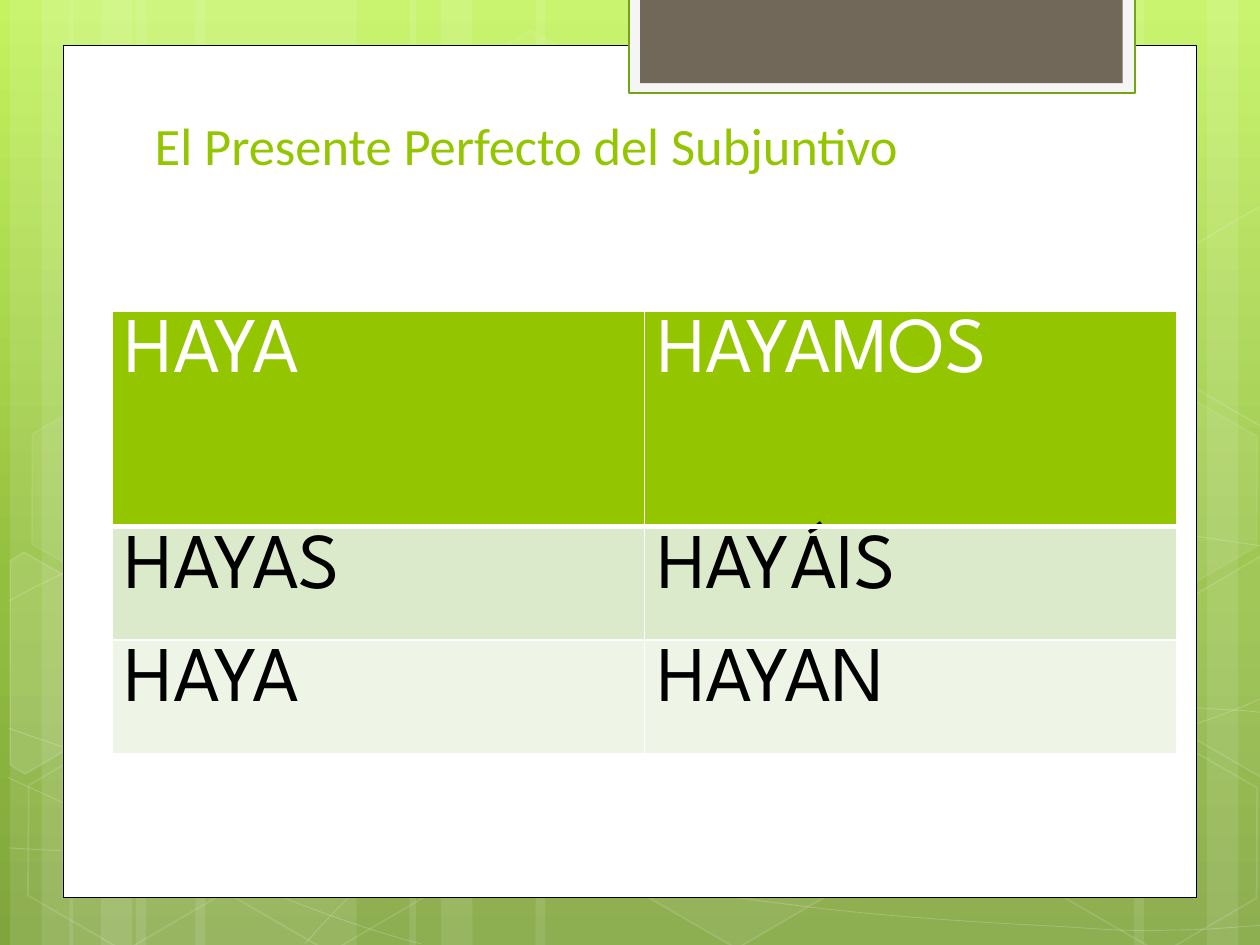
import copy
import math
from dataclasses import dataclass
from typing import Optional

import pptx
import pptx.dml.color
import pptx.enum.shapes
import pptx.enum.text
import pptx.oxml.ns
import pptx.util
from lxml import etree

Inches = pptx.util.Inches
Pt = pptx.util.Pt
qn = pptx.oxml.ns.qn
ShapeKind = pptx.enum.shapes.MSO_SHAPE
Point = tuple[float, float]
TILT = 30


@dataclass
class Paint:
    fill: Optional[str] = None
    fill_opacity: int = 100
    line: Optional[str] = None
    line_width: float = 1
    line_opacity: int = 100


@dataclass
class Hexagon:
    left: float
    top: float
    fill_opacity: int
    line_opacity: int


@dataclass
class CutHexagon:
    center: Point
    points: list[Point]
    fill_opacity: int


@dataclass
class Panel:
    left: float
    top: float
    width: float
    height: float
    paint: Paint


@dataclass
class TableRow:
    height: float
    words: tuple[str, str]
    fill: str
    text: str
    bottom_border: float


BANDS = [(1.08, 1.75), (0.08, 0.5), (0.33, 0.83), (1.55, 1.75), (0.55, 0.5), (0.8, 0.83),
         (7.33, 1.75), (9.58, 0.5), (9, 0.83), (4.25, 3.08), (3.25, 0.5), (3.5, 0.83)]

CURVES: list[list[Point]] = [
    [(0.07, 6.73), (0.61, 6.76), (1.15, 6.79), (1.9, 6.78), (2.65, 6.77), (3.58, 6.75),
     (4.58, 6.65), (5.58, 6.55), (7, 6.36), (7.92, 6.17), (8.83, 5.98), (9.77, 5.68),
     (10.07, 5.51)],
    [(0.07, 4.77), (0.36, 4.61), (0.65, 4.46), (1.21, 4.31), (1.78, 4.16), (2.59, 3.94),
     (3.47, 3.87), (4.36, 3.8), (5.44, 3.79), (6.54, 3.87), (7.64, 3.95), (9.47, 4.26),
     (10.07, 4.34)],
    [(0.06, 6.17), (1.27, 6.72), (2.47, 7.27), (3.34, 7.49)],
    [(0.07, 5.78), (0.38, 5.89), (0.7, 6), (1.28, 6.16), (1.86, 6.31), (2.73, 6.56),
     (3.57, 6.73), (4.4, 6.9), (5.45, 7.08), (6.28, 7.18), (7.11, 7.29), (8, 7.33),
     (8.53, 7.36), (9.05, 7.4), (9.19, 7.38), (9.45, 7.38), (9.71, 7.37), (9.89, 7.35),
     (10.07, 7.34)],
    [(2.42, 7.49), (2.6, 7.29), (2.78, 7.09), (3.02, 6.91), (3.26, 6.73), (3.6, 6.53),
     (3.88, 6.39), (4.16, 6.25), (4.33, 6.19), (4.7, 6.09), (5.06, 5.99), (5.73, 5.85),
     (6.08, 5.78), (6.44, 5.71), (6.49, 5.71), (6.8, 5.69), (7.11, 5.66), (7.6, 5.63),
     (7.94, 5.62), (8.29, 5.61), (8.86, 5.62), (8.86, 5.62), (9.08, 5.62), (9.3, 5.62),
     (9.53, 5.62), (9.71, 5.63), (9.88, 5.64), (9.97, 5.65), (10.06, 5.66), (10.03, 5.65),
     (10.06, 5.66)],
]

HEXAGONS = [
    Hexagon(3.34, 0.36, 4, 8), Hexagon(4.97, 5.89, 6, 12), Hexagon(0.11, 5.91, 0, 12),
    Hexagon(0.14, 3.12, 7, 8), Hexagon(1.74, 5.92, 0, 12), Hexagon(7.53, 4.53, 10, 12),
    Hexagon(8.34, 5.93, 0, 12), Hexagon(8.34, 3.14, 7, 8),
]

CUT_HEXAGONS = [
    CutHexagon((0.36, 5.35), [(0.08, 4.45), (0.19, 4.38), (0.96, 4.82), (0.95, 5.7),
                              (0.2, 6.14), (0.08, 6.07)], 10),
    CutHexagon((9.85, 5.2), [(9.26, 4.85), (10.01, 4.41), (10.09, 4.46), (10.09, 6.13),
                             (10.02, 6.17), (9.26, 5.73)], 4),
    CutHexagon((9.85, 2.41), [(9.26, 2.07), (10.01, 1.63), (10.1, 1.68), (10.09, 3.35),
                              (10.02, 3.39), (9.26, 2.95)], 0),
]

PANELS = [
    Panel(0.5, 0.36, 9, 6.76, Paint("FFFFFF", line="000000", line_width=0.5)),
    Panel(4.99, -0.02, 4.02, 0.76, Paint("F5F5F5", line="74A510", line_width=1.25)),
    Panel(5.08, -0.02, 3.83, 0.68, Paint("71685A")),
]

ROWS = [
    TableRow(1.71, ("HAYA", "HAYAMOS"), "94C600", "FFFFFF", 3),
    TableRow(0.9, ("HAYAS", "HAYÁIS"), "DCEACC", "000000", 1),
    TableRow(0.9, ("HAYA", "HAYAN"), "EEF5E7", "000000", 1),
]


def color(value: str) -> pptx.dml.color.RGBColor:
    return pptx.dml.color.RGBColor.from_string(value)


def set_opacity(parent, percent: int) -> None:
    if percent < 100:
        alpha = etree.SubElement(parent.find(".//" + qn("a:srgbClr")), qn("a:alpha"))
        alpha.set("val", str(percent * 1000))


def apply_paint(shape, paint: Paint) -> None:
    shape.shadow.inherit = False
    properties = shape.element.spPr
    if paint.fill and paint.fill_opacity:
        shape.fill.solid()
        shape.fill.fore_color.rgb = color(paint.fill)
        set_opacity(properties.find(qn("a:solidFill")), paint.fill_opacity)
    else:
        shape.fill.background()
    if paint.line:
        shape.line.color.rgb = color(paint.line)
        shape.line.width = Pt(paint.line_width)
        set_opacity(properties.find(qn("a:ln")), paint.line_opacity)
    else:
        shape.line.fill.background()


def add_panel(slide, panel: Panel) -> None:
    shape = slide.shapes.add_shape(ShapeKind.RECTANGLE, Inches(panel.left), Inches(panel.top),
                                   Inches(panel.width), Inches(panel.height))
    apply_paint(shape, panel.paint)


def add_hexagon(slide, hexagon: Hexagon) -> None:
    shape = slide.shapes.add_shape(ShapeKind.HEXAGON, Inches(hexagon.left), Inches(hexagon.top),
                                   Inches(1.75), Inches(1.52))
    shape.adjustments[0] = 0.285
    shape.adjustments[1] = 1.155
    shape.rotation = TILT
    apply_paint(shape, Paint("FFFFFF", hexagon.fill_opacity, "FFFFFF", 1, hexagon.line_opacity))


def add_outline(slide, points: list[Point], close: bool):
    corners = [(Inches(x), Inches(y)) for x, y in points]
    builder = slide.shapes.build_freeform(*corners[0])
    builder.add_line_segments(corners[1:], close=close)
    return builder.convert_to_shape()


def add_curve(slide, controls: list[Point]) -> None:
    shape = add_outline(slide, controls, False)
    segments = list(shape.element.iter(qn("a:lnTo")))
    for first, second, third in zip(segments[::3], segments[1::3], segments[2::3]):
        curve = etree.Element(qn("a:cubicBezTo"))
        first.addprevious(curve)
        for segment in (first, second, third):
            curve.append(segment[0])
            segment.getparent().remove(segment)
    apply_paint(shape, Paint(line="FFFFFF", line_width=0.5, line_opacity=20))


def turn_back(point: Point, center: Point) -> Point:
    x, y = point[0] - center[0], point[1] - center[1]
    cosine, sine = math.cos(math.radians(TILT)), math.sin(math.radians(TILT))
    return center[0] + x * cosine + y * sine, center[1] - x * sine + y * cosine


def add_cut_hexagon(slide, cut: CutHexagon) -> None:
    shape = add_outline(slide, [turn_back(point, cut.center) for point in cut.points], True)
    shape.rotation = TILT
    apply_paint(shape, Paint("FFFFFF", cut.fill_opacity, "FFFFFF", 1, 12))


def paint_background(slide) -> None:
    fill = slide.background.fill
    fill.gradient()
    fill.gradient_angle = 270
    stop_list = slide.element.find(".//" + qn("a:gsLst"))
    stop_list.append(copy.deepcopy(stop_list[-1]))
    stops = [(0, "C3F35F"), (0.62, "93BF3F"), (1, "81A53E")]
    for stop, (position, value) in zip(fill.gradient_stops, stops):
        stop.position = position
        stop.color.rgb = color(value)


def add_run(paragraph, text: str, font: str, size: float, value: str) -> None:
    run = paragraph.add_run()
    run.text = text
    run.font.name = font
    run.font.size = Pt(size)
    run.font.color.rgb = color(value)


def add_title(slide) -> None:
    box = slide.shapes.add_textbox(Inches(1.13), Inches(0.53), Inches(11.16), Inches(0.92))
    frame = box.text_frame
    frame.word_wrap = True
    frame.vertical_anchor = pptx.enum.text.MSO_ANCHOR.BOTTOM
    add_run(frame.paragraphs[0], "El Presente Perfecto del Subjuntivo", "Calibri", 30, "94C600")


def add_border(cell, side: str, width: float) -> None:
    border = etree.SubElement(cell._tc.get_or_add_tcPr(), qn("a:ln" + side))
    border.set("w", str(Pt(width)))
    solid = etree.SubElement(border, qn("a:solidFill"))
    etree.SubElement(solid, qn("a:srgbClr")).set("val", "FFFFFF")


def add_verb_table(slide) -> None:
    height = sum(row.height for row in ROWS)
    table = slide.shapes.add_table(len(ROWS), 2, Inches(0.89), Inches(2.47),
                                   Inches(8.45), Inches(height)).table
    table.first_row = False
    table.horz_banding = False
    for row_index, row in enumerate(ROWS):
        table.rows[row_index].height = Inches(row.height)
        for column_index, word in enumerate(row.words):
            cell = table.cell(row_index, column_index)
            for side, width in zip("LRTB", (1, 1, 1, row.bottom_border)):
                add_border(cell, side, width)
            cell.fill.solid()
            cell.fill.fore_color.rgb = color(row.fill)
            add_run(cell.text_frame.paragraphs[0], word, "League Spartan", 45, row.text)


def main() -> None:
    presentation = pptx.Presentation()
    presentation.slide_width = Inches(10)
    presentation.slide_height = Inches(7.5)
    slide = presentation.slides.add_slide(presentation.slide_layouts[6])
    paint_background(slide)
    for left, width in BANDS:
        add_panel(slide, Panel(left, 0, width, 7.5, Paint("FFFFFF", 10)))
    for curve in CURVES:
        add_curve(slide, curve)
    for hexagon in HEXAGONS:
        add_hexagon(slide, hexagon)
    for cut in CUT_HEXAGONS:
        add_cut_hexagon(slide, cut)
    for panel in PANELS:
        add_panel(slide, panel)
    add_title(slide)
    add_verb_table(slide)
    presentation.save("out.pptx")


if __name__ == "__main__":
    main()
